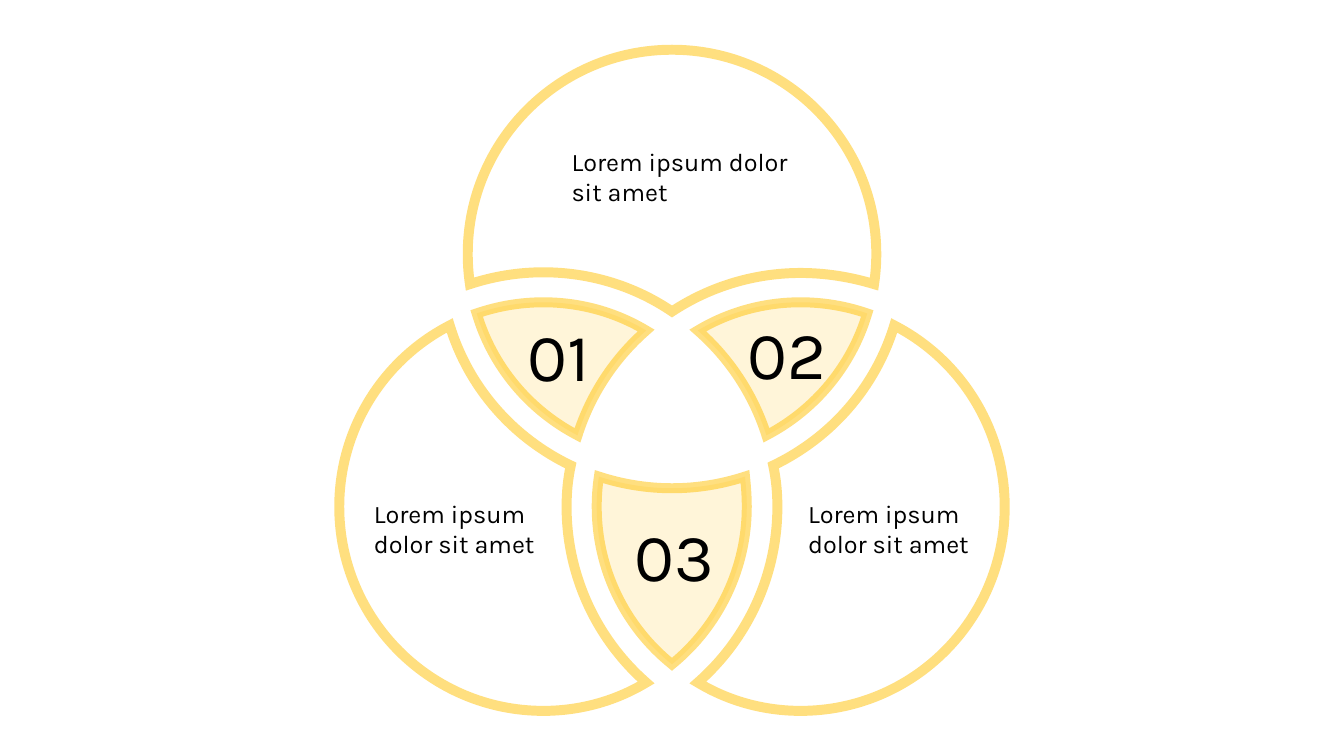
"""Build a slide with three split circles and their numbered overlaps."""
import math

import pptx
import pptx.dml.color
import pptx.enum.text
import pptx.util
from lxml import etree
from pptx.oxml.ns import qn

Cm = pptx.util.Cm
SLIDE_SIZE = (33.86, 19.05)
GOLD, BLACK = "FFC000", "000000"
LINE_ALPHA, FILL_ALPHA = 50, 15
QUARTER = math.pi / 2
CENTRES = {"top": (16.93, 6.4), "left": (13.69, 12.77), "right": (20.17, 12.77)}
MIRRORED = {"top": "top", "left": "right", "right": "left"}

# Each corner: x, y, centre of the arc that leaves it, whether that arc is the long way round
TOP_CIRCLE = [(11.84, 7.16, "left", False), (16.93, 7.85, "right", False), (22.02, 7.16, "top", True)]
LEFT_CIRCLE = [(16.28, 17.2, "right", False), (14.38, 11.73, "top", False), (11.33, 8.2, "left", True)]
LEFT_OVERLAP = [(12.01, 7.9, "left", False), (16.28, 8.33, "right", False), (14.55, 10.97, "top", False)]
BOTTOM_OVERLAP = [(16.93, 16.74, "left", False), (18.77, 12.01, "top", False), (15.09, 12.01, "right", False)]

LABEL = "Lorem ipsum dolor sit amet"
TEXTS = [
    (LABEL, 18, (14.15, 3.56, 5.97, 2.57)),
    (LABEL, 18, (20.11, 12.43, 4.57, 2.57)),
    (LABEL, 18, (9.17, 12.43, 4.57, 2.57)),
    ("01", 48, (13.04, 7.8, 2.69, 2.31)),
    ("02", 48, (18.59, 7.75, 2.69, 2.31)),
    ("03", 48, (15.73, 12.83, 2.69, 2.31)),
]


def colour(value):
    return pptx.dml.color.RGBColor.from_string(value)


def apply_format(target, values):
    for name, value in values.items():
        setattr(target, name, value)


def mirror(corners):
    return [(SLIDE_SIZE[0] - x, y, MIRRORED[centre], is_long) for x, y, centre, is_long in corners]


def arc_curves(start, end):
    """Return cubic curves for one arc, split where it meets the axes of its circle."""
    x, y, centre, is_long = start
    centre_x, centre_y = CENTRES[centre]
    first = math.atan2(y - centre_y, x - centre_x)
    sweep = math.remainder(math.atan2(end[1] - centre_y, end[0] - centre_x) - first, math.tau)
    if is_long:
        sweep -= math.copysign(math.tau, sweep)
    last = first + sweep
    low, high = sorted((first, last))
    axes = [n * QUARTER for n in range(math.ceil(low / QUARTER), math.floor(high / QUARTER) + 1)]
    angles = sorted([first, *axes, last], reverse=sweep < 0)
    radius = math.hypot(x - centre_x, y - centre_y)

    def place(angle, tangent=0):
        return (Cm(centre_x + radius * (math.cos(angle) - tangent * math.sin(angle))),
                Cm(centre_y + radius * (math.sin(angle) + tangent * math.cos(angle))))

    curves = []
    for begin, finish in zip(angles, angles[1:]):
        reach = 4 / 3 * math.tan((finish - begin) / 4)
        curves.append([place(begin, reach), place(finish, -reach), place(finish)])
    curves[-1][-1] = (Cm(end[0]), Cm(end[1]))
    return curves


def paint(fill, parent, alpha):
    fill.solid()
    fill.fore_color.rgb = colour(GOLD)
    tint = parent.find(qn("a:solidFill")).find(qn("a:srgbClr"))
    etree.SubElement(tint, qn("a:alpha"), val=str(alpha * 1000))


def bend_sides(shape, curves):
    sides = list(shape._element.spPr.iter(qn("a:lnTo")))
    for side, curve in zip(sides, curves):
        bend = etree.Element(qn("a:cubicBezTo"))
        for x, y in curve:
            etree.SubElement(bend, qn("a:pt"), x=str(x - shape.left), y=str(y - shape.top))
        side.getparent().replace(side, bend)


def add_region(slide, corners, is_filled):
    curves = []
    for start, end in zip(corners, corners[1:] + corners[:1]):
        curves += arc_curves(start, end)
    builder = slide.shapes.build_freeform(*curves[-1][-1])
    builder.add_line_segments([curve[-1] for curve in curves], close=True)
    shape = builder.convert_to_shape()
    bend_sides(shape, curves)
    shape.shadow.inherit = False
    if is_filled:
        paint(shape.fill, shape._element.spPr, FILL_ALPHA)
    else:
        shape.fill.background()
    shape.line.width = pptx.util.Pt(7.11)
    outline = shape._element.spPr.find(qn("a:ln"))
    paint(shape.line.fill, outline, LINE_ALPHA)
    etree.SubElement(outline, qn("a:miter"), lim="800000")


def add_text(slide, text, size, box):
    frame = slide.shapes.add_textbox(*map(Cm, box)).text_frame
    apply_format(frame, {"word_wrap": True, "auto_size": pptx.enum.text.MSO_AUTO_SIZE.SHAPE_TO_FIT_TEXT})
    run = frame.paragraphs[0].add_run()
    run.text = text
    apply_format(run.font, {"name": "Karla", "size": pptx.util.Pt(size)})
    run.font.color.rgb = colour(BLACK)


def main():
    presentation = pptx.Presentation()
    width, height = map(Cm, SLIDE_SIZE)
    apply_format(presentation, {"slide_width": width, "slide_height": height})
    slide = presentation.slides.add_slide(presentation.slide_layouts[6])
    for corners in (TOP_CIRCLE, mirror(LEFT_CIRCLE), LEFT_CIRCLE):
        add_region(slide, corners, False)
    for corners in (BOTTOM_OVERLAP, mirror(LEFT_OVERLAP), LEFT_OVERLAP):
        add_region(slide, corners, True)
    for text, size, box in TEXTS:
        add_text(slide, text, size, box)
    presentation.save("out.pptx")


if __name__ == "__main__":
    main()
